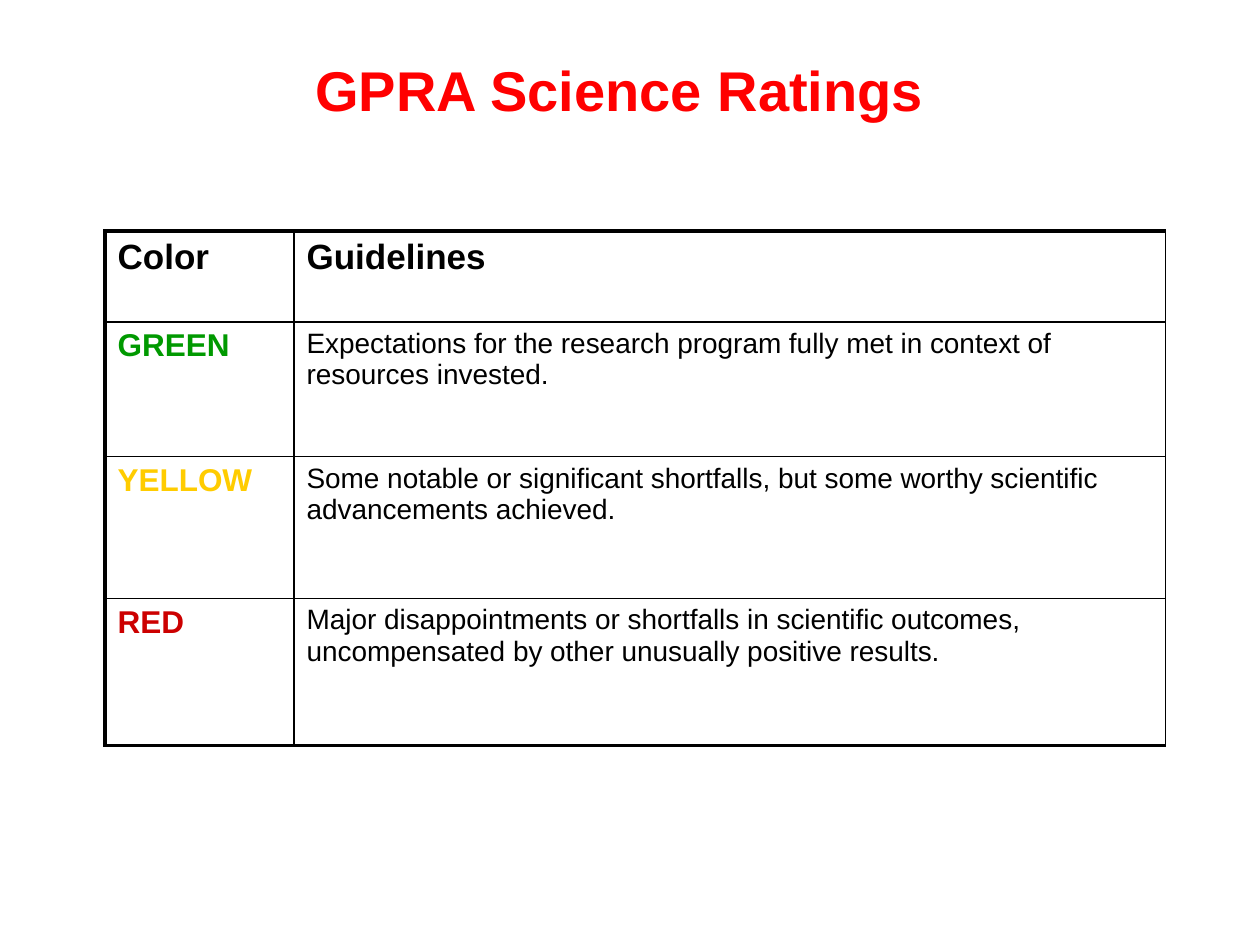
from lxml.etree import SubElement
from pptx import Presentation
from pptx.dml.color import RGBColor
from pptx.enum.text import MSO_ANCHOR as Anchor, PP_ALIGN as Align
from pptx.oxml.ns import qn
from pptx.util import Pt

COLORS = {
    "title": "FF0000",
    "ink": "000000",
    "paper": "FFFFFF",
    "green": "009900",
    "yellow": "FFCC00",
    "red": "CC0000",
}
HEADER = {"size": Pt(20), "bold": True}
RATING = {"size": Pt(18), "bold": True}
GUIDELINE = {"size": Pt(16), "bold": False}
THIN, THICK = 1, 2.25

COLUMN_WIDTHS = [108, 498]
ROW_HEIGHTS = [52, 77, 81, 84]
RATINGS = [
    ("green", "Expectations for the research program fully met in context of "
              "resources invested."),
    ("yellow", "Some notable or significant shortfalls, but some worthy "
               "scientific advancements achieved."),
    ("red", "Major disappointments or shortfalls in scientific outcomes, "
            "uncompensated by other unusually positive results."),
]


def write(para, text, color, style):
    span = para.add_run()
    span.text = text
    for name, value in {"name": "Arial", **style}.items():
        setattr(span.font, name, value)
    span.font.color.rgb = RGBColor.from_string(COLORS[color])


def add_title(page, text):
    box = page.shapes.add_textbox(Pt(48), Pt(24), Pt(612), Pt(54))
    frame = box.text_frame
    frame.word_wrap = True
    frame.vertical_anchor = Anchor.MIDDLE
    para = frame.paragraphs[0]
    para.alignment = Align.CENTER
    write(para, text, "title", {"size": Pt(32), "bold": True})


def set_borders(cell, widths):
    """Draw the left, right, top and bottom borders in the given widths."""
    properties = cell._tc.get_or_add_tcPr()
    for side, width in zip("LRTB", widths):
        line = SubElement(properties, qn(f"a:ln{side}"), w=str(Pt(width)))
        fill = SubElement(line, qn("a:solidFill"))
        SubElement(fill, qn("a:srgbClr"), val=COLORS["ink"])


def fill_cell(cell, text, color, style, borders):
    set_borders(cell, borders)
    cell.fill.solid()
    cell.fill.fore_color.rgb = RGBColor.from_string(COLORS["paper"])
    write(cell.text_frame.paragraphs[0], text, color, style)


def add_ratings_table(page):
    rows = [[("Color", "ink", HEADER), ("Guidelines", "ink", HEADER)]]
    rows += [[(name.upper(), name, RATING), (guideline, "ink", GUIDELINE)]
             for name, guideline in RATINGS]
    frame = page.shapes.add_table(
        len(rows), len(COLUMN_WIDTHS), Pt(60), Pt(132),
        Pt(sum(COLUMN_WIDTHS)), Pt(sum(ROW_HEIGHTS)))
    table = frame.table
    table.first_row = table.horz_banding = False
    for column, width in zip(table.columns, COLUMN_WIDTHS):
        column.width = Pt(width)
    for row, height in zip(table.rows, ROW_HEIGHTS):
        row.height = Pt(height)
    last = len(rows) - 1
    for r, row in enumerate(rows):
        for c, content in enumerate(row):
            borders = (THICK if c == 0 else THIN, THIN,
                       THICK if r == 0 else THIN,
                       THICK if r == last else THIN)
            fill_cell(table.cell(r, c), *content, borders)


def main():
    deck = Presentation()
    deck.slide_width, deck.slide_height = Pt(720), Pt(540)
    page = deck.slides.add_slide(deck.slide_layouts[6])
    add_title(page, "GPRA Science Ratings")
    add_ratings_table(page)
    deck.save("out.pptx")


if __name__ == "__main__":
    main()
